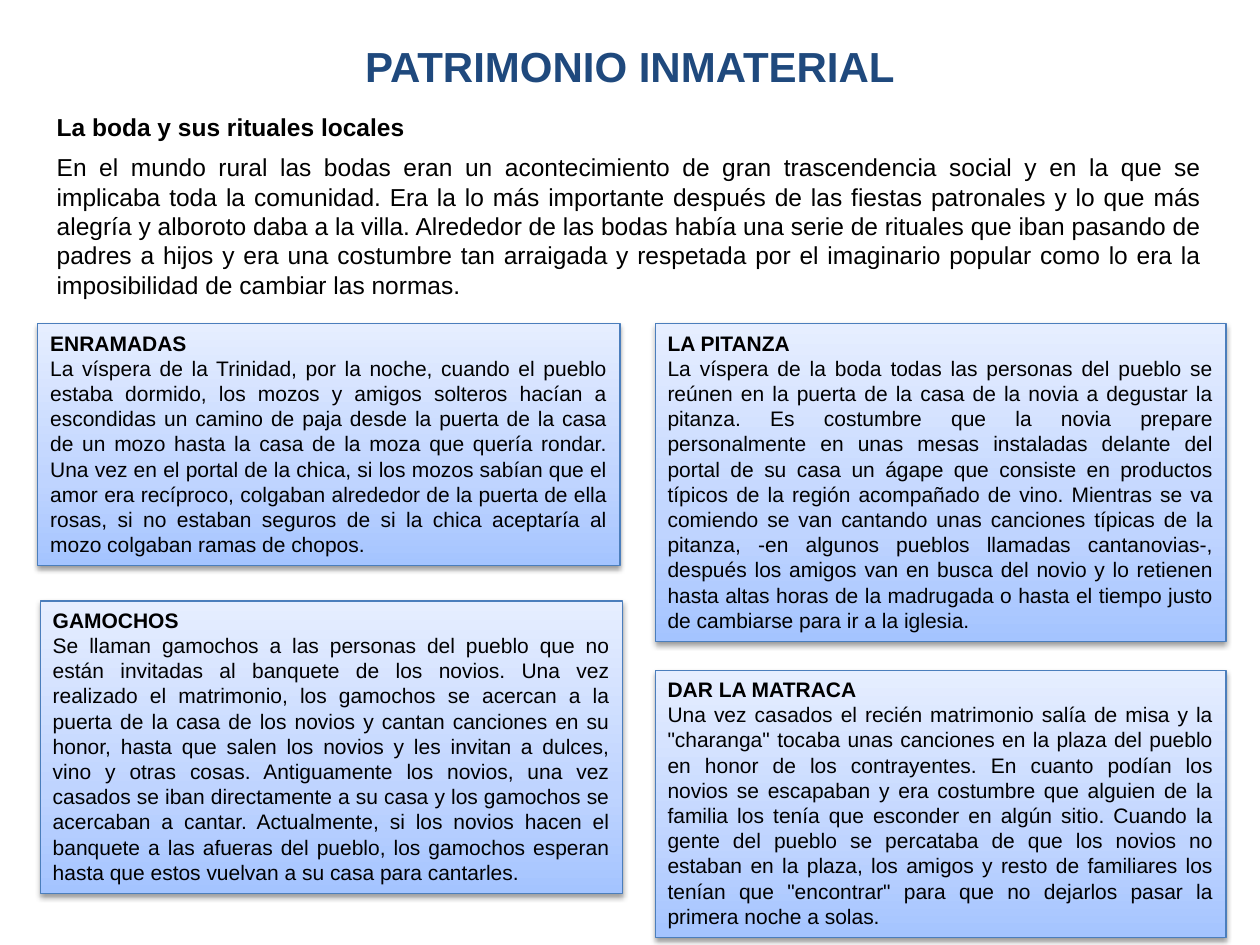
from lxml import etree
from pptx import Presentation
from pptx.dml.color import RGBColor
from pptx.enum.shapes import MSO_SHAPE
from pptx.enum.text import MSO_ANCHOR, MSO_AUTO_SIZE, PP_ALIGN
from pptx.oxml import parse_xml
from pptx.oxml.ns import nsdecls, qn
from pptx.util import Inches, Pt

RECT = MSO_SHAPE.RECTANGLE
TOP, MIDDLE = MSO_ANCHOR.TOP, MSO_ANCHOR.MIDDLE
NO_FIT = MSO_AUTO_SIZE.NONE
LEFT, CENTER, JUSTIFY = PP_ALIGN.LEFT, PP_ALIGN.CENTER, PP_ALIGN.JUSTIFY

GRADIENT = [(0, "A4C4FF"), (35, "BFD4FF"), (100, "E6EEFF")]
LEFT_W, RIGHT_W = 4.62, 4.53
RIGHT_X = 5.2


def color(hex_value):
    return RGBColor.from_string(hex_value)


def add_run(p, text, size, bold, hex_value="000000"):
    r = p.add_run()
    r.text = text
    r.font.name = "Arial"
    r.font.size = Pt(size)
    r.font.bold = bold
    r.font.color.rgb = color(hex_value)


prs = Presentation()
prs.slide_width, prs.slide_height = Inches(10), Inches(7.5)
s = prs.slides.add_slide(prs.slide_layouts[1])

# Title
title = s.shapes.title
title.left, title.top = Inches(0.5), Inches(0.13)
title.width, title.height = Inches(9), Inches(0.78)
tf = title.text_frame
tf.auto_size = NO_FIT
tf.vertical_anchor = MIDDLE
p = tf.paragraphs[0]
p.alignment = CENTER
add_run(p, "PATRIMONIO INMATERIAL", 24, True, "1F497D")

# Introduction
body = s.placeholders[1]
body.left, body.top = Inches(0.35), Inches(0.84)
body.width, body.height = Inches(9.29), Inches(1.73)
tf = body.text_frame
tf.auto_size = NO_FIT
heading, intro = tf.paragraphs[0], tf.add_paragraph()
intro.space_before = Pt(6)
for p in (heading, intro):
    p.alignment = JUSTIFY
    pPr = p._p.get_or_add_pPr()
    pPr.set("marL", "0")
    pPr.set("indent", "0")
    etree.SubElement(pPr, qn("a:buNone"))
add_run(heading, "La boda y sus rituales locales", 14, True)
add_run(intro, (
    "En el mundo rural las bodas eran un acontecimiento de gran trascendencia social y en la "
    "que se implicaba toda la comunidad. Era la lo más importante después de las fiestas "
    "patronales y lo que más alegría y alboroto daba a la villa. Alrededor de las bodas había "
    "una serie de rituales que iban pasando de padres a hijos y era una costumbre tan arraigada "
    "y respetada por el imaginario popular como lo era la imposibilidad de cambiar las normas."
), 14, False)

# Ritual boxes: left, top, width, height, heading, text
rituals = [
    (0.3, 2.57, LEFT_W, 1.92, "ENRAMADAS",
     "La víspera de la Trinidad, por la noche, cuando el pueblo estaba dormido, los mozos y "
     "amigos solteros hacían a escondidas un camino de paja desde la puerta de la casa de un "
     "mozo hasta la casa de la moza que quería rondar. Una vez en el portal de la chica, si los "
     "mozos sabían que el amor era recíproco, colgaban alrededor de la puerta de ella rosas, si "
     "no estaban seguros de si la chica aceptaría al mozo colgaban ramas de chopos."),
    (RIGHT_X, 2.57, RIGHT_W, 2.52, "LA PITANZA",
     "La víspera de la boda todas las personas del pueblo se reúnen en la puerta de la casa de "
     "la novia a degustar la pitanza. Es costumbre que la novia prepare personalmente en unas "
     "mesas instaladas delante del portal de su casa un ágape que consiste en productos típicos "
     "de la región acompañado de vino. Mientras se va comiendo se van cantando unas canciones "
     "típicas de la pitanza, -en algunos pueblos llamadas cantanovias-, después los amigos van "
     "en busca del novio y lo retienen hasta altas horas de la madrugada o hasta el tiempo justo "
     "de cambiarse para ir a la iglesia."),
    (0.32, 4.77, LEFT_W, 2.32, "GAMOCHOS",
     "Se llaman gamochos a las personas del pueblo que no están invitadas al banquete de los "
     "novios. Una vez realizado el matrimonio, los gamochos se acercan a la puerta de la casa de "
     "los novios y cantan canciones en su honor, hasta que salen los novios y les invitan a "
     "dulces, vino y otras cosas. Antiguamente los novios, una vez casados se iban directamente "
     "a su casa y los gamochos se acercaban a cantar. Actualmente, si los novios hacen el "
     "banquete a las afueras del pueblo, los gamochos esperan hasta que estos vuelvan a su casa "
     "para cantarles."),
    (RIGHT_X, 5.32, RIGHT_W, 2.12, "DAR LA MATRACA",
     "Una vez casados el recién matrimonio salía de misa y la \"charanga\" tocaba unas canciones "
     "en la plaza del pueblo en honor de los contrayentes. En cuanto podían los novios se "
     "escapaban y era costumbre que alguien de la familia los tenía que esconder en algún sitio. "
     "Cuando la gente del pueblo se percataba de que los novios no estaban en la plaza, los "
     "amigos y resto de familiares los tenían que \"encontrar\" para que no dejarlos pasar la "
     "primera noche a solas."),
]
for x, y, w, h, name, text in rituals:
    sp = s.shapes.add_shape(RECT, Inches(x), Inches(y), Inches(w), Inches(h))
    sp.line.color.rgb = color("4B7EBC")
    sp.line.width = Pt(0.75)

    # Three-stop gradient, light at the top
    sp.fill.gradient()
    sp.fill.gradient_angle = 90
    stops = sp._element.spPr.find(".//" + qn("a:gsLst"))
    for stop in list(stops):
        stops.remove(stop)
    for pos, hex_value in GRADIENT:
        stops.append(parse_xml(
            f'<a:gs {nsdecls("a")} pos="{pos * 1000}"><a:srgbClr val="{hex_value}"/></a:gs>'))

    # Soft shadow below
    sp.shadow.inherit = False
    sp._element.spPr.find(qn("a:effectLst")).append(parse_xml(
        f'<a:outerShdw {nsdecls("a")} blurRad="{Pt(3.1)}" dist="{Pt(1.6)}" dir="5400000" '
        'rotWithShape="0"><a:srgbClr val="000000"><a:alpha val="38000"/></a:srgbClr>'
        '</a:outerShdw>'))

    tf = sp.text_frame
    tf.word_wrap = True
    tf.vertical_anchor = TOP
    tf.auto_size = MSO_AUTO_SIZE.SHAPE_TO_FIT_TEXT
    p = tf.paragraphs[0]
    p.alignment = LEFT
    add_run(p, name, 12, True)
    p = tf.add_paragraph()
    p.alignment = JUSTIFY
    add_run(p, text, 12, False)

prs.save("out.pptx")
